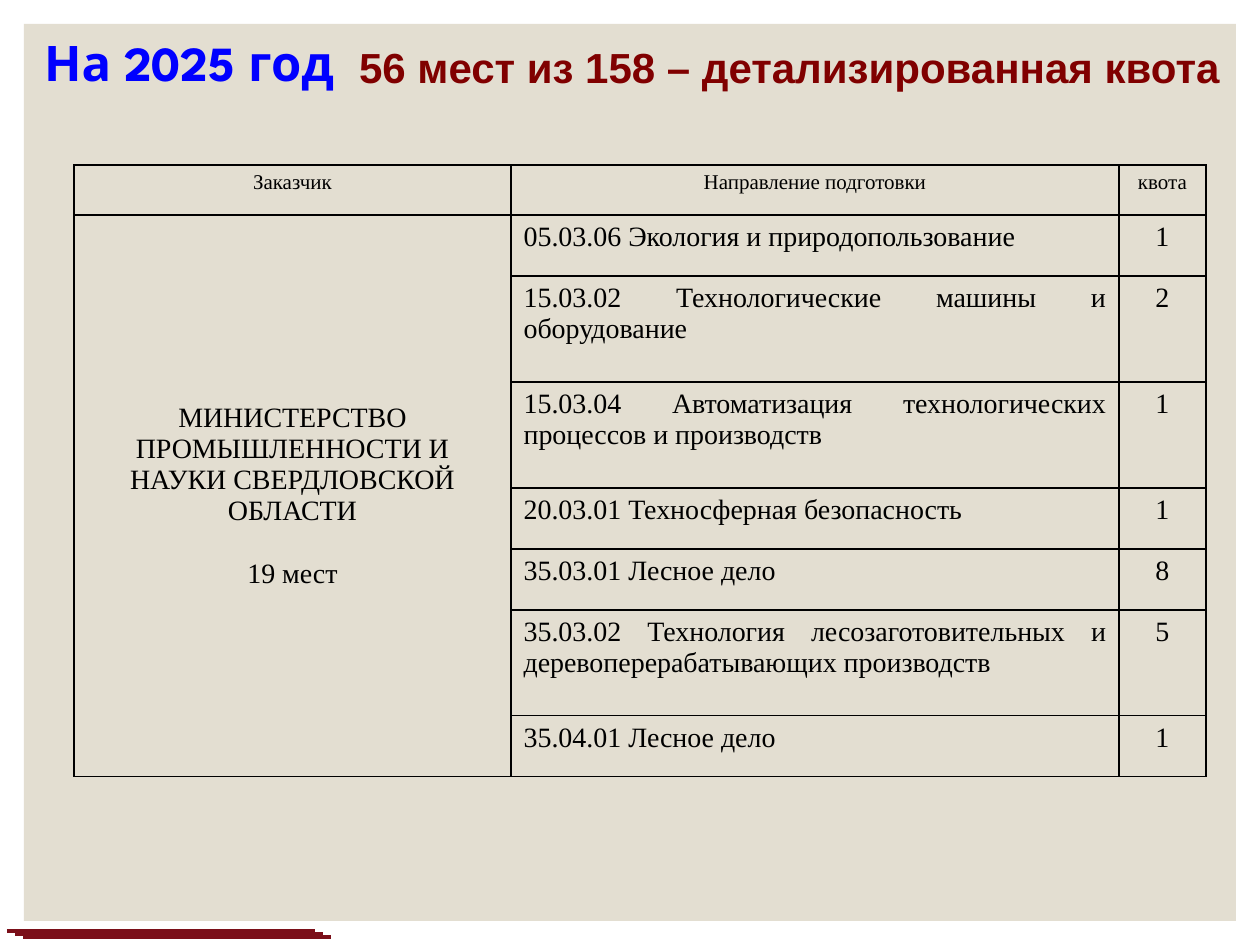
import pptx
import pptx.dml.color
import pptx.enum.shapes
import pptx.enum.text
import pptx.oxml
import pptx.oxml.ns
import pptx.util

RGB = pptx.dml.color.RGBColor
ALIGN = pptx.enum.text.PP_ALIGN
ANCHOR = pptx.enum.text.MSO_ANCHOR
SAND = RGB(0xE3, 0xDE, 0xD1)
MAROON = RGB(0x7B, 0x0F, 0x19)
BLUE = RGB(0x00, 0x00, 0xFF)
DARK_RED = RGB(0x80, 0x00, 0x00)
BLACK = RGB(0x00, 0x00, 0x00)

TITLE = "На 2025 год"
SUBTITLE = "56 мест из 158 – детализированная квота"
HEADINGS = ["Заказчик", "Направление подготовки", "квота"]
CUSTOMER = "МИНИСТЕРСТВО ПРОМЫШЛЕННОСТИ И НАУКИ СВЕРДЛОВСКОЙ ОБЛАСТИ"
PLACES = "19 мест"
QUOTAS = [
    ("05.03.06 Экология и природопользование", 1),
    ("15.03.02 Технологические машины и оборудование", 2),
    ("15.03.04 Автоматизация технологических процессов и производств", 1),
    ("20.03.01 Техносферная безопасность", 1),
    ("35.03.01 Лесное дело", 8),
    ("35.03.02 Технология лесозаготовительных и деревоперерабатывающих производств", 5),
    ("35.04.01 Лесное дело", 1),
]

TITLE_FONT = {"name": "League Spartan", "size": pptx.util.Pt(28), "bold": True}
SUBTITLE_FONT = {"name": "Arial", "size": pptx.util.Pt(24), "bold": True}
HEADING_FONT = {"name": "Times New Roman", "size": pptx.util.Pt(12)}
BODY_FONT = {"name": "Times New Roman", "size": pptx.util.Pt(16)}

COLUMN_WIDTHS = [437, 608, 87]
HEADING_HEIGHT, SHORT_ROW, TALL_ROW = 50, 61, 106
ONE_LINE_CHARS = 40
STRIPE_LEFT, STRIPE_TOP, STRIPE_LENGTH = 7, 931, 308
STRIPE_STEP = (8, 3)


def px(length):
    return pptx.util.Emu(round(length * 914400 / 126))


def box(*lengths):
    return [px(length) for length in lengths]


def write(frame, lines, font, color, align):
    frame.word_wrap = True
    frame.text = "\n".join(lines)
    for paragraph in frame.paragraphs:
        paragraph.alignment = align
        for run in paragraph.runs:
            for attribute, value in font.items():
                setattr(run.font, attribute, value)
            run.font.color.rgb = color


def fill_cell(cell, lines, font, align):
    write(cell.text_frame, lines, font, BLACK, align)


def outline_cell(cell):
    properties = cell._tc.get_or_add_tcPr()
    for side in ("lnL", "lnR", "lnT", "lnB"):
        properties.append(pptx.oxml.parse_xml(
            f'<a:{side} {pptx.oxml.ns.nsdecls("a")} w="{pptx.util.Pt(1)}">'
            f'<a:solidFill><a:srgbClr val="{BLACK}"/></a:solidFill></a:{side}>'))
    cell.fill.background()


def add_background(slide):
    panel = slide.shapes.add_shape(
        pptx.enum.shapes.MSO_SHAPE.RECTANGLE, *box(24, 24, 1212, 897))
    panel.shadow.inherit = False
    panel.fill.solid()
    panel.fill.fore_color.rgb = SAND
    panel.line.fill.background()
    # The title placeholder already exists, so the panel goes beneath it.
    slide.shapes._spTree.insert(2, panel._element)

    for index in range(3):
        left = STRIPE_LEFT + index * STRIPE_STEP[0]
        top = STRIPE_TOP + index * STRIPE_STEP[1]
        stripe = slide.shapes.add_connector(
            pptx.enum.shapes.MSO_CONNECTOR.STRAIGHT,
            *box(left, top, left + STRIPE_LENGTH, top))
        stripe.line.color.rgb = MAROON
        stripe.line.width = pptx.util.Pt(2.25)
        stripe._element.spPr.append(pptx.oxml.parse_xml(
            f'<a:effectLst {pptx.oxml.ns.nsdecls("a")}/>'))


def add_headings(slide):
    title = slide.shapes.title
    title.left, title.top, title.width, title.height = box(25, 26, 328, 72)
    write(title.text_frame, [TITLE], TITLE_FONT, BLUE, ALIGN.CENTER)
    subtitle = slide.shapes.add_textbox(*box(343, 35, 893, 63))
    write(subtitle.text_frame, [SUBTITLE], SUBTITLE_FONT, DARK_RED, ALIGN.CENTER)
    for frame in (title.text_frame, subtitle.text_frame):
        frame.vertical_anchor = ANCHOR.TOP
        frame.auto_size = pptx.enum.text.MSO_AUTO_SIZE.NONE


def add_quota_table(slide):
    heights = [HEADING_HEIGHT] + [
        SHORT_ROW if len(course) <= ONE_LINE_CHARS else TALL_ROW for course, _ in QUOTAS]
    table = slide.shapes.add_table(
        len(heights), len(COLUMN_WIDTHS),
        *box(74, 165, sum(COLUMN_WIDTHS), sum(heights))).table
    table.first_row = table.horz_banding = False
    for column, width in zip(table.columns, COLUMN_WIDTHS):
        column.width = px(width)
    for row, height in zip(table.rows, heights):
        row.height = px(height)
    for cell in table.iter_cells():
        outline_cell(cell)

    for column, heading in enumerate(HEADINGS):
        fill_cell(table.cell(0, column), [heading], HEADING_FONT, ALIGN.CENTER)
    for row, (course, quota) in enumerate(QUOTAS, start=1):
        fill_cell(table.cell(row, 1), [course], BODY_FONT, ALIGN.JUSTIFY)
        fill_cell(table.cell(row, 2), [str(quota)], BODY_FONT, ALIGN.CENTER)

    customer = table.cell(1, 0)
    customer.merge(table.cell(len(QUOTAS), 0))
    fill_cell(customer, [CUSTOMER, PLACES], BODY_FONT, ALIGN.CENTER)
    customer.vertical_anchor = ANCHOR.MIDDLE
    customer.text_frame.paragraphs[1].space_before = pptx.util.Pt(18)


def main():
    presentation = pptx.Presentation()
    presentation.slide_width, presentation.slide_height = box(1260, 945)
    slide = presentation.slides.add_slide(presentation.slide_layouts[5])
    add_background(slide)
    add_headings(slide)
    add_quota_table(slide)
    presentation.save("out.pptx")


if __name__ == "__main__":
    main()
